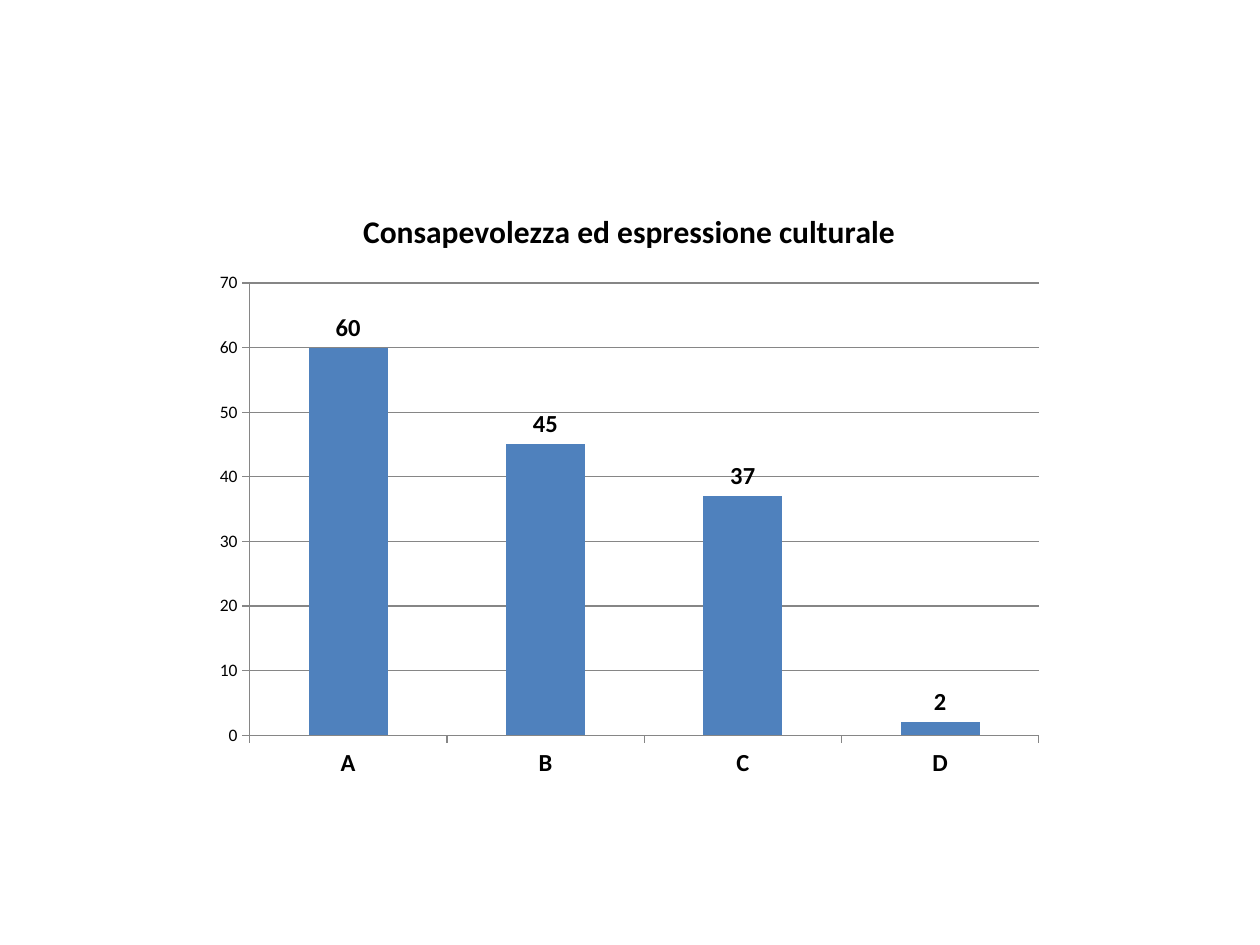
from pptx import Presentation
from pptx.chart.data import CategoryChartData
from pptx.dml.color import RGBColor
from pptx.enum.chart import XL_CHART_TYPE, XL_LABEL_POSITION, XL_TICK_MARK
from pptx.util import Inches, Pt

COLUMNS = XL_CHART_TYPE.COLUMN_CLUSTERED
LABEL_ABOVE = XL_LABEL_POSITION.OUTSIDE_END
TICK_OUT = XL_TICK_MARK.OUTSIDE

# Content
TITLE = "Consapevolezza ed espressione culturale"
LEVELS = {"A": 60, "B": 45, "C": 37, "D": 2}
COLORS = {"text": "000000", "bar": "4F81BD", "line": "868686"}
FONT = "Calibri"


def style_font(font, size, bold=False):
    font.name = FONT
    font.size = Pt(size)
    font.bold = bold
    font.color.rgb = RGBColor.from_string(COLORS["text"])


def style_line(line):
    line.color.rgb = RGBColor.from_string(COLORS["line"])
    line.width = Pt(0.75)


prs = Presentation()
prs.slide_width, prs.slide_height = Inches(10), Inches(7.5)
slide = prs.slides.add_slide(prs.slide_layouts[6])

# Chart
level_data = CategoryChartData()
level_data.categories = list(LEVELS)
level_data.add_series(TITLE, list(LEVELS.values()))
chart = slide.shapes.add_chart(
    COLUMNS, Inches(1.61), Inches(1.47), Inches(6.77), Inches(4.8), level_data
).chart
style_font(chart.font, 10)
chart.has_legend = False

# Title
chart.has_title = True
title_run = chart.chart_title.text_frame.paragraphs[0].add_run()
title_run.text = TITLE
style_font(title_run.font, 18, bold=True)
chart.chart_title.include_in_layout = False

# Axes
level_axis, count_axis = chart.category_axis, chart.value_axis
for axis in (level_axis, count_axis):
    axis.major_tick_mark = TICK_OUT
    style_line(axis.format.line)
style_font(level_axis.tick_labels.font, 14, bold=True)
style_font(count_axis.tick_labels.font, 10)
count_axis.minimum_scale, count_axis.maximum_scale = 0, 70
count_axis.major_unit = 10
count_axis.has_major_gridlines = True
style_line(count_axis.major_gridlines.format.line)

# Bars and their values
plot = chart.plots[0]
plot.gap_width = 150
plot.vary_by_categories = False
bars = plot.series[0]
bars.format.fill.solid()
bars.format.fill.fore_color.rgb = RGBColor.from_string(COLORS["bar"])
bar_labels = bars.data_labels
bar_labels.show_value = True
bar_labels.position = LABEL_ABOVE
style_font(bar_labels.font, 14, bold=True)

prs.save("out.pptx")
